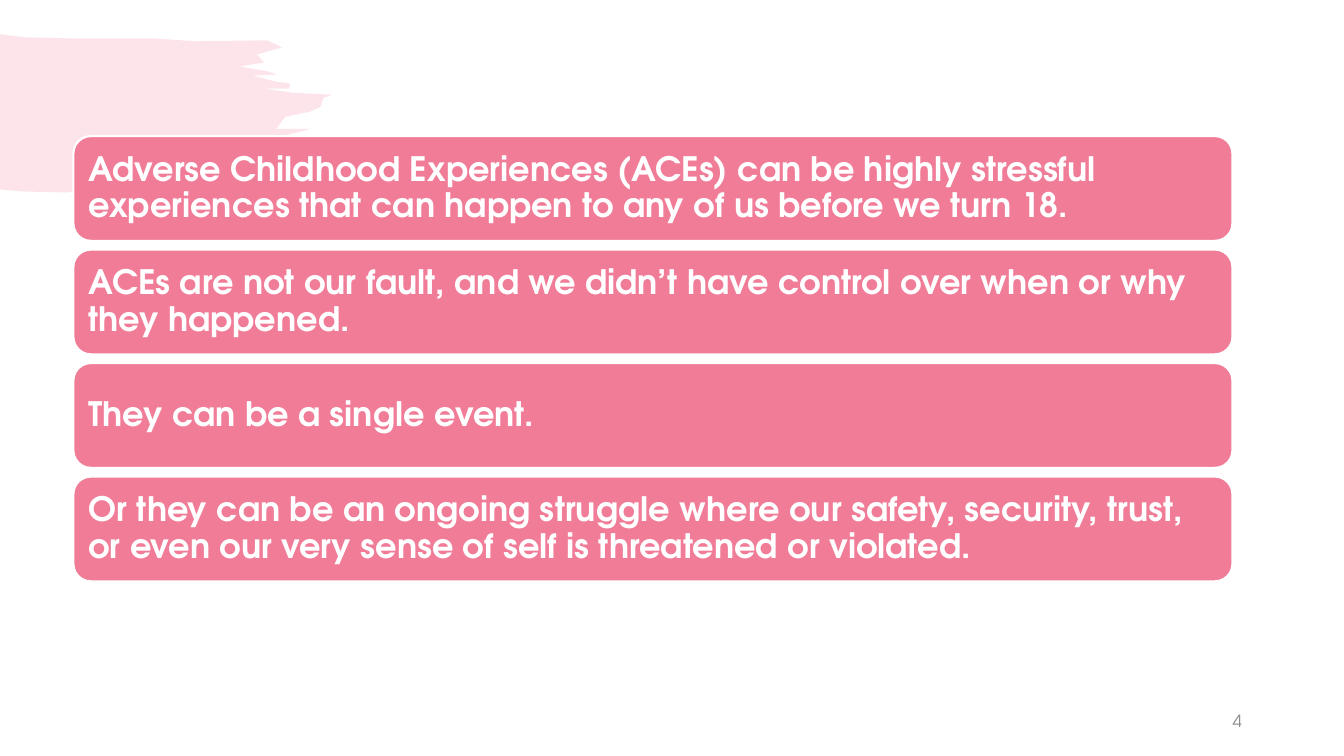
import pptx
import pptx.dml.color
import pptx.enum.shapes
import pptx.enum.text
import pptx.oxml
import pptx.oxml.ns
import pptx.util
from dataclasses import dataclass

Cm = pptx.util.Cm
Pt = pptx.util.Pt


@dataclass(frozen=True)
class Theme:
    pink: str = "F07C98"
    white: str = "FFFFFF"
    grey: str = "8C8C8C"
    font: str = "TeX Gyre Adventor"
    statement_size: int = 24
    number_size: int = 12
    brush_opacity: int = 20


THEME = Theme()

STATEMENTS = [
    "Adverse Childhood Experiences (ACEs) can be highly stressful "
    "experiences that can happen to any of us before we turn 18.",
    "ACEs are not our fault, and we didn’t have control over when or why they happened.",
    "They can be a single event.",
    "Or they can be an ongoing struggle where our safety, security, trust, "
    "or even our very sense of self is threatened or violated.",
]

# Brush outline in hundredths of an inch, clockwise from the top left
BRUSH_OUTLINE = [
    (0, 34), (25, 37), (66, 38), (151, 38), (194, 41), (265, 40), (280, 47),
    (255, 54), (262, 62), (238, 66), (266, 71), (275, 74), (251, 75), (273, 81),
    (288, 83), (287, 88), (263, 88), (290, 92), (330, 94), (321, 97), (318, 106),
    (307, 111), (283, 116), (274, 128), (308, 128), (269, 138), (252, 148),
    (197, 172), (102, 188), (65, 191), (23, 190), (0, 188),
]


def rgb(value):
    return pptx.dml.color.RGBColor.from_string(value)


def apply_format(target, values):
    for name, value in values.items():
        setattr(target, name, value)


def fill_shape(shape, color):
    shape.shadow.inherit = False
    shape.fill.solid()
    shape.fill.fore_color.rgb = rgb(color)


def write_text(shape, text, frame_format, paragraph_format, font_format, color):
    frame = shape.text_frame
    apply_format(frame, {
        "word_wrap": True,
        "vertical_anchor": pptx.enum.text.MSO_ANCHOR.MIDDLE,
        **frame_format,
    })
    paragraph = frame.paragraphs[0]
    apply_format(paragraph, paragraph_format)
    run = paragraph.add_run()
    run.text = text
    apply_format(run.font, {"name": THEME.font, **font_format})
    run.font.color.rgb = rgb(color)


def add_brush(slide):
    # One outline unit is a hundredth of an inch
    builder = slide.shapes.build_freeform(*BRUSH_OUTLINE[0], scale=Cm(2.54) / 100)
    builder.add_line_segments(BRUSH_OUTLINE[1:], close=True)
    shape = builder.convert_to_shape()
    fill_shape(shape, THEME.pink)
    shape.line.fill.background()
    color = shape.element.spPr.find(".//" + pptx.oxml.ns.qn("a:srgbClr"))
    alpha = pptx.oxml.parse_xml(
        f'<a:alpha {pptx.oxml.ns.nsdecls("a")} val="{THEME.brush_opacity * 1000}"/>')
    color.append(alpha)


def add_statement(slide, text, top):
    shape = slide.shapes.add_shape(
        pptx.enum.shapes.MSO_SHAPE.ROUNDED_RECTANGLE, Cm(1.85), top, Cm(29.21), Cm(2.64))
    fill_shape(shape, THEME.pink)
    shape.line.color.rgb = rgb(THEME.white)
    shape.line.width = Pt(1.5)
    margins = ("margin_left", "margin_top", "margin_right", "margin_bottom")
    write_text(
        shape, text, dict.fromkeys(margins, Cm(0.25)),
        {"alignment": pptx.enum.text.PP_ALIGN.LEFT, "line_spacing": 0.9},
        {"size": Pt(THEME.statement_size), "bold": True}, THEME.white)


def add_slide_number(slide, number):
    box = slide.shapes.add_textbox(Cm(23.93), Cm(17.65), Cm(7.62), Cm(1.02))
    write_text(
        box, number, {},
        {"alignment": pptx.enum.text.PP_ALIGN.RIGHT, "space_after": Pt(6)},
        {"size": Pt(THEME.number_size)}, THEME.grey)


def main():
    presentation = pptx.Presentation()
    presentation.slide_width = Cm(33.87)
    presentation.slide_height = Cm(19.05)
    slide = presentation.slides.add_slide(presentation.slide_layouts[6])

    # Background brush stroke and slide number
    add_brush(slide)
    add_slide_number(slide, "4")

    # Stack of statements at an even pitch
    for index, text in enumerate(STATEMENTS):
        add_statement(slide, text, Cm(3.43) + index * Cm(2.86))

    presentation.save("out.pptx")


if __name__ == "__main__":
    main()
